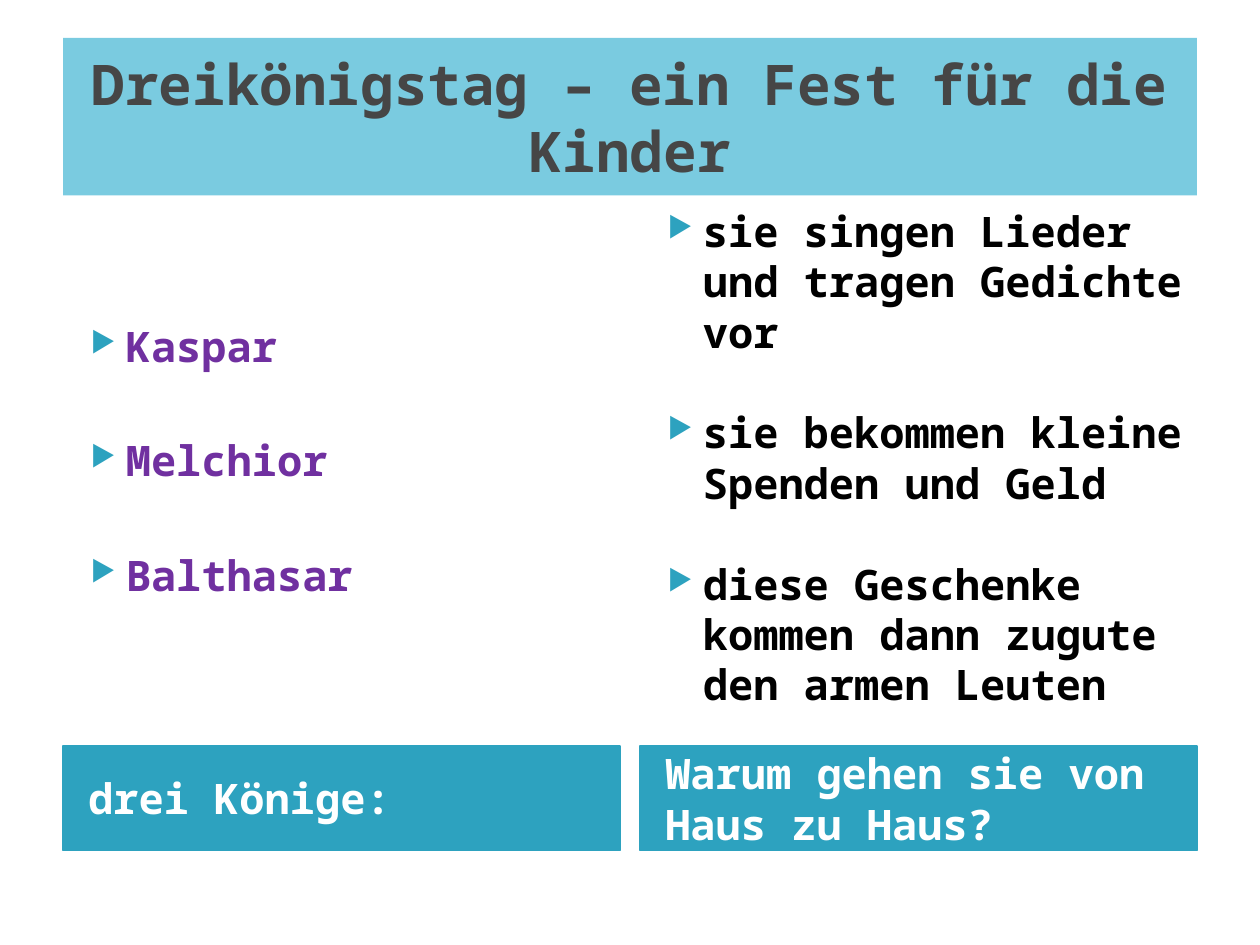
from dataclasses import dataclass

import pptx
import pptx.dml.color
import pptx.enum.shapes
import pptx.enum.text
import pptx.oxml.ns
import pptx.util
from lxml import etree

Pt = pptx.util.Pt
ANCHOR = pptx.enum.text.MSO_ANCHOR
ALIGN = pptx.enum.text.PP_ALIGN


@dataclass(frozen=True)
class Theme:
    font: str = "Noto Sans Mono"
    title_size: int = 32
    text_size: int = 24
    banner: str = "7ACBE0"
    title: str = "464646"
    accent: str = "2DA2BF"
    kings: str = "7030A0"
    reasons: str = "000000"
    caption: str = "FFFFFF"


THEME = Theme()
MARGIN, COLUMN_WIDTH, COLUMN_STEP = 36, 318.24, 329.76


def rgb(color):
    return pptx.dml.color.RGBColor.from_string(color)


def add_text(paragraph, text, size, color):
    run = paragraph.add_run()
    run.text = text
    run.font.name = THEME.font
    run.font.size = Pt(size)
    run.font.bold = True
    run.font.color.rgb = rgb(color)


def set_bullet(paragraph):
    properties = paragraph._p.get_or_add_pPr()
    properties.set("marL", str(Pt(28.8)))
    properties.set("indent", str(Pt(-20.16)))
    qn = pptx.oxml.ns.qn
    bullet_color = etree.SubElement(properties, qn("a:buClr"))
    etree.SubElement(bullet_color, qn("a:srgbClr"), val=THEME.accent)
    etree.SubElement(properties, qn("a:buSzPct"), val="68000")
    etree.SubElement(properties, qn("a:buChar"), char="▶")


def add_title(slide, text):
    banner = slide.shapes.title
    banner.left, banner.top = Pt(MARGIN), Pt(21.6)
    banner.width, banner.height = Pt(648), Pt(90)
    banner.fill.solid()
    banner.fill.fore_color.rgb = rgb(THEME.banner)
    frame = banner.text_frame
    frame.auto_size = pptx.enum.text.MSO_AUTO_SIZE.NONE
    frame.vertical_anchor = ANCHOR.MIDDLE
    heading = frame.paragraphs[0]
    heading.alignment = ALIGN.CENTER
    add_text(heading, text, THEME.title_size, THEME.title)


def add_bullets(slide, left, items, color, gap, top_inset):
    column = slide.shapes.add_textbox(Pt(left), Pt(113.76), Pt(COLUMN_WIDTH), Pt(310.32))
    frame = column.text_frame
    frame.word_wrap = True
    frame.margin_top = Pt(top_inset)
    for index, item in enumerate(items):
        paragraph = frame.add_paragraph() if index else frame.paragraphs[0]
        set_bullet(paragraph)
        if index:
            paragraph.space_before = Pt(gap)
        add_text(paragraph, item, THEME.text_size, color)


def add_caption(slide, left, text):
    caption = slide.shapes.add_shape(
        pptx.enum.shapes.MSO_SHAPE.RECTANGLE,
        Pt(left), Pt(426.24), Pt(COLUMN_WIDTH), Pt(59.76))
    caption.shadow.inherit = False
    caption.fill.solid()
    caption.fill.fore_color.rgb = rgb(THEME.accent)
    caption.line.color.rgb = rgb(THEME.accent)
    caption.line.width = Pt(0.75)
    frame = caption.text_frame
    frame.word_wrap = True
    frame.vertical_anchor = ANCHOR.MIDDLE
    frame.margin_left = Pt(14.4)
    frame.paragraphs[0].alignment = ALIGN.LEFT
    add_text(frame.paragraphs[0], text, THEME.text_size, THEME.caption)


def main():
    deck = pptx.Presentation()
    deck.slide_width, deck.slide_height = Pt(720), Pt(540)
    slide = deck.slides.add_slide(deck.slide_layouts[5])

    add_title(slide, "Dreikönigstag – ein Fest für die Kinder")

    # Each column: caption, items, item colour, gap between items, top inset
    columns = [
        ("drei Könige:", ["Kaspar", "Melchior", "Balthasar"],
         THEME.kings, 36.8, 69.2),
        ("Warum gehen sie von Haus zu Haus?",
         ["sie singen Lieder und tragen Gedichte vor",
          "sie bekommen kleine Spenden und Geld",
          "diese Geschenke kommen dann zugute den armen Leuten"],
         THEME.reasons, 28.8, 3.6),
    ]
    for index, (caption, items, color, gap, top_inset) in enumerate(columns):
        left = MARGIN + index * COLUMN_STEP
        add_caption(slide, left, caption)
        add_bullets(slide, left, items, color, gap, top_inset)

    deck.save("out.pptx")


if __name__ == "__main__":
    main()
